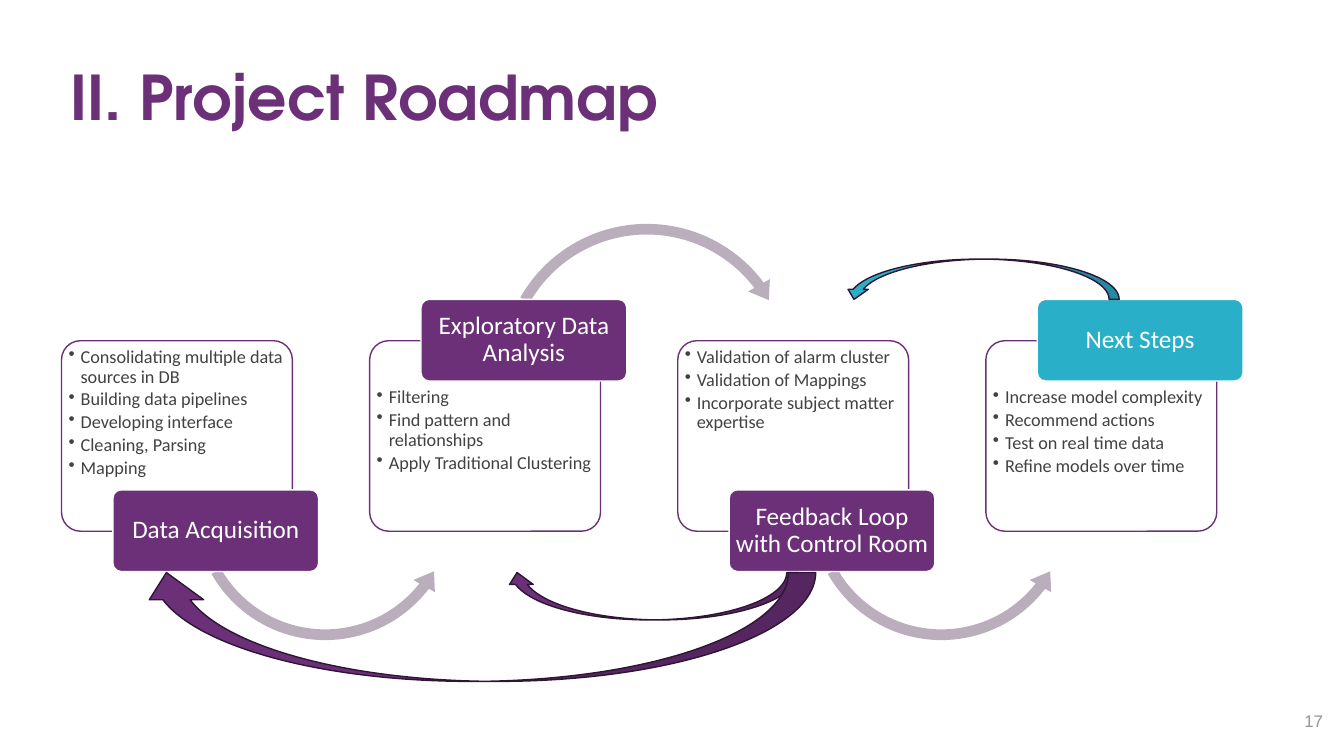
from lxml import etree
from pptx import Presentation
from pptx.dml.color import RGBColor as RGB
from pptx.enum.shapes import MSO_SHAPE as SHAPE
from pptx.enum.text import MSO_ANCHOR as ANCHOR, PP_ALIGN as ALIGN
from pptx.oxml.ns import qn
from pptx.util import Inches, Pt

COLORS = {
    "purple": "6B3077", "teal": "2AAFC9", "mauve": "BAAEBD", "dark": "2F1534",
    "white": "FFFFFF", "text": "424242", "gray": "939393",
}
UNDER = (SHAPE.LEFT_CIRCULAR_ARROW, 1.25, 3.69, 2.73,
         [0.039, 4.877, 22.632, 90.245, 0.045])
OVER = (SHAPE.CIRCULAR_ARROW, 1.235, 2.15, 3.03,
        [0.035, 4.365, 193.88, 125.755, 0.041])
STAGES = [
    ("Data Acquisition", "purple", False, UNDER,
     ["Consolidating multiple data sources in DB", "Building data pipelines",
      "Developing interface", "Cleaning, Parsing", "Mapping"]),
    ("Exploratory Data Analysis", "purple", True, OVER,
     ["Filtering", "Find pattern and relationships",
      "Apply Traditional Clustering"]),
    ("Feedback Loop with Control Room", "purple", False, UNDER,
     ["Validation of alarm cluster", "Validation of Mappings",
      "Incorporate subject matter expertise"]),
    ("Next Steps", "teal", True, None,
     ["Increase model complexity", "Recommend actions",
      "Test on real time data", "Refine models over time"]),
]
FEEDBACK = [
    (SHAPE.CURVED_DOWN_ARROW, 5.01, 5.68, 2.91, 0.47, "purple"),
    (SHAPE.CURVED_DOWN_ARROW, 1.38, 5.68, 6.71, 1.08, "purple"),
    (SHAPE.CURVED_UP_ARROW, 8.37, 2.57, 2.73, 0.4, "teal"),
]


class RoadmapSlide:
    """Draws the elements of a roadmap on one slide in a shared style."""

    def __init__(self, s):
        self.s = s

    def color(self, name):
        return RGB.from_string(COLORS[name])

    def shape(self, kind, x, y, w, h, fill, line=None, adj=(), rotation=0):
        sp = self.s.shapes.add_shape(
            kind, Inches(x), Inches(y), Inches(w), Inches(h))
        sp.shadow.inherit = False
        sp.rotation = rotation
        sp.fill.solid()
        sp.fill.fore_color.rgb = self.color(fill)
        if line:
            sp.line.color.rgb = self.color(line)
            sp.line.width = Pt(1)
        else:
            sp.line.fill.background()
        for i, value in enumerate(adj):
            sp.adjustments[i] = value
        return sp

    def text(self, x, y, w, h, lines, size, color, font="Calibri", bold=False,
             align=ALIGN.LEFT, anchor=ANCHOR.TOP, inset=(0.1, 0.05),
             spacing=0.9, after=0, bullet=False):
        tf = self.s.shapes.add_textbox(
            Inches(x), Inches(y), Inches(w), Inches(h)).text_frame
        tf.word_wrap = True
        tf.vertical_anchor = anchor
        tf.margin_left = tf.margin_right = Inches(inset[0])
        tf.margin_top = tf.margin_bottom = Inches(inset[1])
        tf.text = "\n".join(lines)
        for p in tf.paragraphs:
            p.alignment = align
            p.line_spacing = spacing
            p.space_after = Pt(after)
            if bullet:
                self.bullet(p)
            f = p.runs[0].font
            f.name, f.size, f.bold = font, Pt(size), bold
            f.color.rgb = self.color(color)

    def bullet(self, p):
        pPr = p._p.get_or_add_pPr()
        pPr.set("marL", str(Inches(0.12)))
        pPr.set("indent", str(-Inches(0.12)))
        etree.SubElement(pPr, qn("a:buChar")).set("char", "•")

    def card(self, x, y, w, h):
        sp = self.shape(SHAPE.ROUNDED_RECTANGLE, x, y, w, h,
                        "white", "purple", [0.1])
        fill = sp._element.spPr.find(qn("a:solidFill"))
        etree.SubElement(fill[0], qn("a:alpha")).set("val", "90000")

    def stage(self, x, title, color, title_on_top, arrow, items):
        self.card(x, 3.38, 2.29, 1.89)
        self.text(x + 0.04, 3.82 if title_on_top else 3.42, 2.21, 1.4, items,
                  13, "text", inset=(0.03, 0.03), after=2.2, bullet=True)
        if arrow:
            kind, dx, y, size, adj = arrow
            self.shape(kind, x + dx, y, size, size, "mauve", adj=adj)
        y = 2.97 if title_on_top else 4.86
        self.shape(SHAPE.ROUNDED_RECTANGLE, x + 0.51, y, 2.04, 0.81,
                   color, "white", [0.1])
        self.text(x + 0.535, y + 0.025, 1.99, 0.76, [title], 18, "white",
                  align=ALIGN.CENTER, anchor=ANCHOR.MIDDLE, inset=(0.04, 0.03))


def main():
    prs = Presentation()
    prs.slide_width, prs.slide_height = Inches(13.33), Inches(7.5)
    slide = RoadmapSlide(prs.slides.add_slide(prs.slide_layouts[6]))
    slide.text(0.6, 0.62, 10.81, 1.33, ["II. Project Roadmap"], 44, "purple",
               font="TeX Gyre Adventor", bold=True)
    for i, stage in enumerate(STAGES):
        slide.stage(0.61 + 3.056 * i, *stage)
    slide.text(12.73, 6.95, 0.6, 0.4, ["17"], 12, "gray", font="Arial",
               align=ALIGN.CENTER, anchor=ANCHOR.MIDDLE, spacing=1.0)
    for kind, x, y, w, h, fill in FEEDBACK:
        slide.shape(kind, x, y, w, h, fill, "dark", rotation=180)
    prs.save("out.pptx")


if __name__ == "__main__":
    main()
